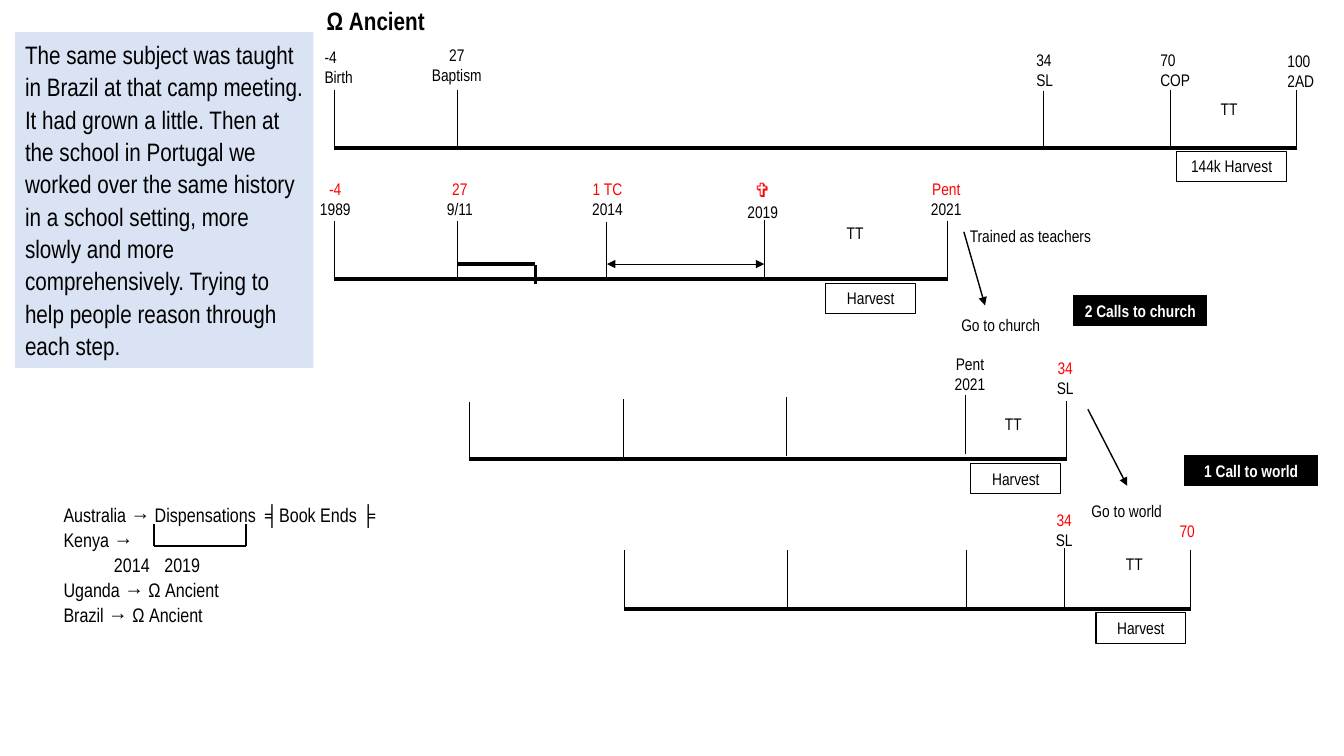
import pptx
import pptx.util
import pptx.dml.color
import pptx.enum.shapes
import pptx.enum.text
import pptx.oxml
import pptx.oxml.ns
import lxml.etree

Inches = pptx.util.Inches
Pt = pptx.util.Pt
qn = pptx.oxml.ns.qn
ALIGN = pptx.enum.text.PP_ALIGN
RECTANGLE = pptx.enum.shapes.MSO_SHAPE.RECTANGLE
STRAIGHT = pptx.enum.shapes.MSO_CONNECTOR.STRAIGHT
FONT = "Arial Narrow"
COLORS = {"black": "000000", "white": "FFFFFF", "red": "FF0000", "panel": "DAE3F3"}
RGB = {name: pptx.dml.color.RGBColor.from_string(value) for name, value in COLORS.items()}

presentation = pptx.Presentation()
presentation.slide_width = Inches(13.33)
presentation.slide_height = Inches(7.5)
slide = presentation.slides.add_slide(presentation.slide_layouts[1])


def write(shape, lines, align=ALIGN.CENTER, spacing=1.0):
    """Fill a shape with one paragraph per (text, size, color, bold) line."""
    frame = shape.text_frame
    frame.word_wrap = True
    frame.auto_size = pptx.enum.text.MSO_AUTO_SIZE.NONE
    frame.vertical_anchor = pptx.enum.text.MSO_ANCHOR.TOP
    for index, (text, size, color, bold) in enumerate(lines):
        paragraph = frame.paragraphs[0] if index == 0 else frame.add_paragraph()
        paragraph.alignment = align
        paragraph.line_spacing = spacing
        paragraph.space_before = Pt(0)
        run = paragraph.add_run()
        run.text = text
        run.font.name = FONT
        run.font.size = Pt(size)
        run.font.bold = bold
        run.font.color.rgb = RGB[color]


def draw_line(x1, y1, x2, y2, width, arrows=()):
    """Draw a black line; arrows may hold headEnd (start) and tailEnd (end)."""
    connector = slide.shapes.add_connector(
        STRAIGHT, Inches(x1), Inches(y1), Inches(x2), Inches(y2))
    connector.line.color.rgb = RGB["black"]
    connector.line.width = Pt(width)
    outline = connector.line._get_or_add_ln()
    for end in arrows:
        lxml.etree.SubElement(outline, qn("a:" + end), type="triangle")
    lxml.etree.SubElement(connector._element.spPr, qn("a:effectLst"))


# Title
title = slide.shapes.title
title.left, title.top, title.width, title.height = map(Inches, (3.14, 0, 1.78, 0.4))
write(title, [("Ω Ancient", 18, "black", True)], ALIGN.LEFT)

# Country list
countries = slide.placeholders[1]
countries.left, countries.top, countries.width, countries.height = map(
    Inches, (0.53, 4.92, 3.44, 1.59))
country_lines = [
    "Australia → Dispensations\t╡Book Ends ╞",
    "Kenya →",
    "\t2014\t2019",
    "Uganda → Ω Ancient",
    "Brazil → Ω Ancient",
]
write(countries, [(text, 14, "black", False) for text in country_lines], ALIGN.LEFT, 1.07)
tab_stops = {0: [2.03], 2: [0.71, 1.55]}
for index, paragraph in enumerate(countries.text_frame.paragraphs):
    properties = paragraph._p.get_or_add_pPr()
    properties.set("marL", "0")
    properties.set("indent", "0")
    lxml.etree.SubElement(properties, qn("a:buNone"))
    if index in tab_stops:
        tab_list = lxml.etree.SubElement(properties, qn("a:tabLst"))
        for position in tab_stops[index]:
            lxml.etree.SubElement(tab_list, qn("a:tab"), pos=str(Inches(position)), algn="l")

# Bracket joining 2014 and 2019 in the list
for x in (1.53, 2.44):
    draw_line(x, 5.2, x, 5.42, 1.5)
draw_line(1.53, 5.42, 2.44, 5.42, 1.5)

# Passage and boxes: left, top, width, height, fill, outline
passage = (
    "The same subject was taught in Brazil at that camp meeting. It had grown a little. "
    "Then at the school in Portugal we worked over the same history in a school setting, "
    "more slowly and more comprehensively. Trying to help people reason through each step.")
boxes = [
    (0.15, 0.32, 2.96, 3.33, "panel", None, (passage, 18, "black", False)),
    (11.67, 1.5, 1.09, 0.3, None, "black", ("144k Harvest", 12, "black", False)),
    (10.65, 2.93, 1.32, 0.3, "black", "black", ("2 Calls to church", 12, "white", True)),
    (11.75, 4.52, 1.32, 0.3, "black", "black", ("1 Call to world", 12, "white", True)),
]
for left, top in ((8.19, 2.81), (9.63, 4.6), (10.87, 6.08)):
    boxes.append((left, top, 0.89, 0.3, None, "black", ("Harvest", 12, "black", False)))
for left, top, width, height, fill, outline, line in boxes:
    box = slide.shapes.add_shape(
        RECTANGLE, Inches(left), Inches(top), Inches(width), Inches(height))
    box.shadow.inherit = False
    if fill:
        box.fill.solid()
        box.fill.fore_color.rgb = RGB[fill]
    else:
        box.fill.background()
    if outline:
        box.line.color.rgb = RGB[outline]
        box.line.width = Pt(0.75)
    else:
        box.line.fill.background()
    if fill == "panel":
        write(box, [line], ALIGN.LEFT, 1.07)
    else:
        write(box, [line])

# Timelines: start, end, baseline, {tick position: tick top}
TICK_HEIGHT = 0.58
timelines = [
    (3.31, 12.86, 1.47, {3.32: 0.89, 4.54: 0.89, 10.35: 0.9, 11.61: 0.89, 12.86: 0.89}),
    (3.31, 9.4, 2.77, {3.32: 2.19, 4.54: 2.19, 6.02: 2.2, 7.58: 2.18, 9.4: 2.19}),
    (4.66, 10.58, 4.55, {4.66: 3.99, 6.18: 3.96, 7.8: 3.94, 9.58: 3.92, 10.58: 3.98}),
    (6.19, 11.81, 6.04, {6.19: 5.46, 7.81: 5.46, 9.59: 5.46, 10.56: 5.44, 11.81: 5.46}),
]
for start, end, baseline, ticks in timelines:
    draw_line(start, baseline, end, baseline, 3)
    for x, top in ticks.items():
        draw_line(x, top, x, top + TICK_HEIGHT, 0.75)

# Step and span on the second timeline, then the arrows between timelines
draw_line(4.54, 2.62, 5.31, 2.62, 2.25)
draw_line(5.31, 2.63, 5.31, 2.82, 2.25)
draw_line(6.02, 2.62, 7.58, 2.62, 0.5, ("headEnd", "tailEnd"))
draw_line(9.56, 2.3, 9.77, 3.03, 1, ("tailEnd",))
draw_line(10.79, 4.06, 11.18, 4.82, 1, ("tailEnd",))

# Labels: left, top, width, alignment, first line, its color, second line
labels = [
    (3.12, 0.41, 0.75, ALIGN.LEFT, "-4", "black", "Birth"),
    (4.17, 0.39, 0.72, ALIGN.CENTER, "27", "black", "Baptism"),
    (10.18, 0.44, 0.49, ALIGN.LEFT, "34", "black", "SL"),
    (11.41, 0.44, 0.56, ALIGN.LEFT, "70", "black", "COP"),
    (12.67, 0.45, 0.49, ALIGN.LEFT, "100", "black", "2AD"),
    (3.07, 1.72, 0.51, ALIGN.CENTER, "-4", "red", "1989"),
    (4.2, 1.72, 0.72, ALIGN.CENTER, "27", "red", "9/11"),
    (5.77, 1.72, 0.51, ALIGN.CENTER, "1 TC", "red", "2014"),
    (7.31, 1.72, 0.51, ALIGN.CENTER, "✞", "red", "2019"),
    (9.13, 1.72, 0.51, ALIGN.CENTER, "Pent", "red", "2021"),
    (9.31, 3.46, 0.62, ALIGN.CENTER, "Pent", "black", "2021"),
    (10.31, 3.5, 0.51, ALIGN.CENTER, "34", "red", "SL"),
    (10.3, 5.01, 0.51, ALIGN.CENTER, "34", "red", "SL"),
    (11.52, 5.12, 0.51, ALIGN.CENTER, "70", "red", None),
    (9.5, 2.19, 1.44, ALIGN.CENTER, "Trained as teachers", "black", None),
    (9.43, 3.07, 0.99, ALIGN.CENTER, "Go to church", "black", None),
    (10.72, 4.92, 0.91, ALIGN.CENTER, "Go to world", "black", None),
]
for left, top in ((11.83, 0.93), (8.12, 2.16), (9.69, 4.06), (10.89, 5.44)):
    labels.append((left, top, 0.72, ALIGN.CENTER, "TT", "black", None))
for left, top, width, align, first, color, second in labels:
    is_cross = first == "✞"
    lines = [(first, 14 if is_cross else 12, color, is_cross)]
    if second:
        lines.append((second, 12, "black", False))
    label = slide.shapes.add_textbox(
        Inches(left), Inches(top), Inches(width), Inches(0.5 if second else 0.3))
    write(label, lines, align)
    if first.startswith("Go to"):
        label.text_frame.word_wrap = False

presentation.save("out.pptx")
